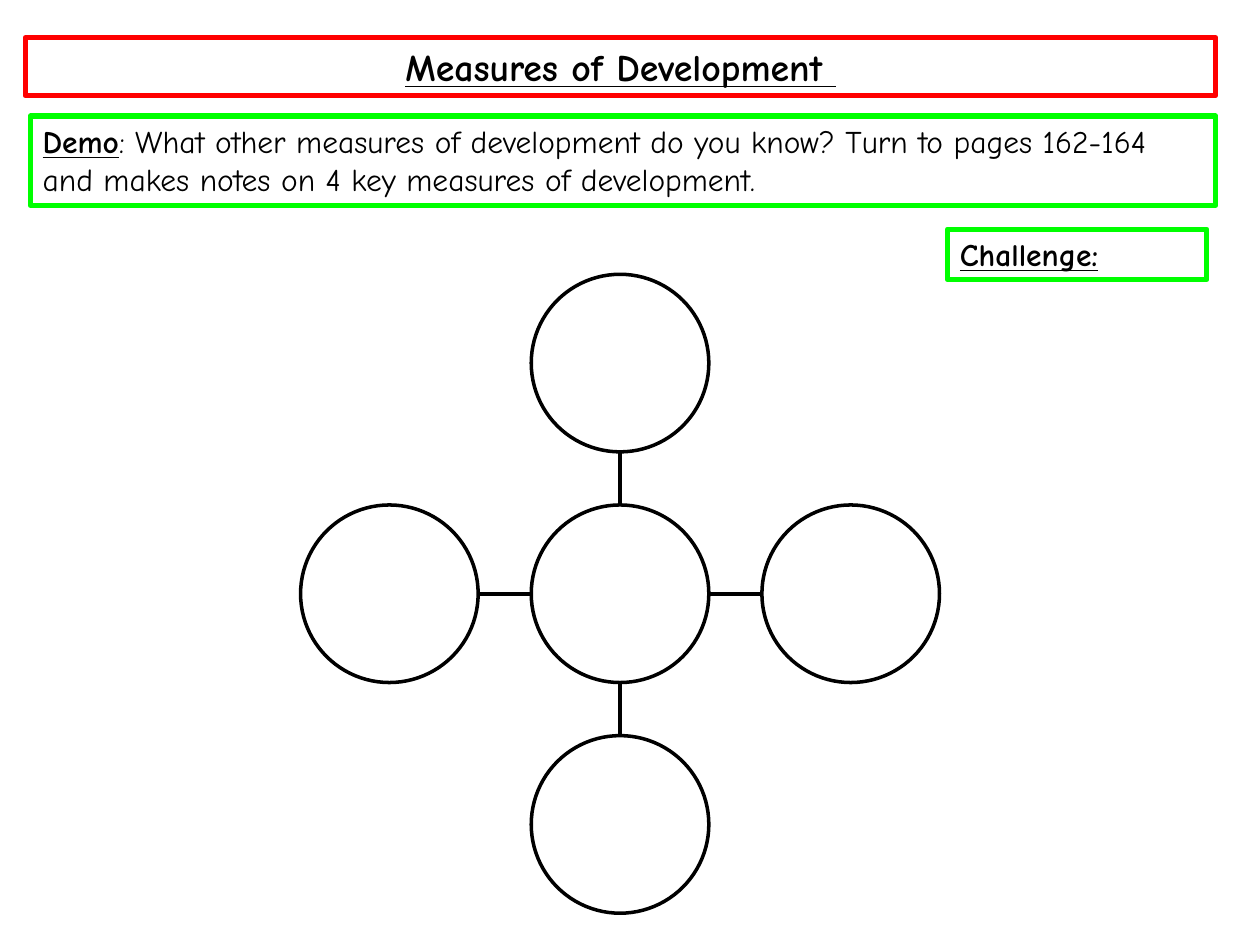
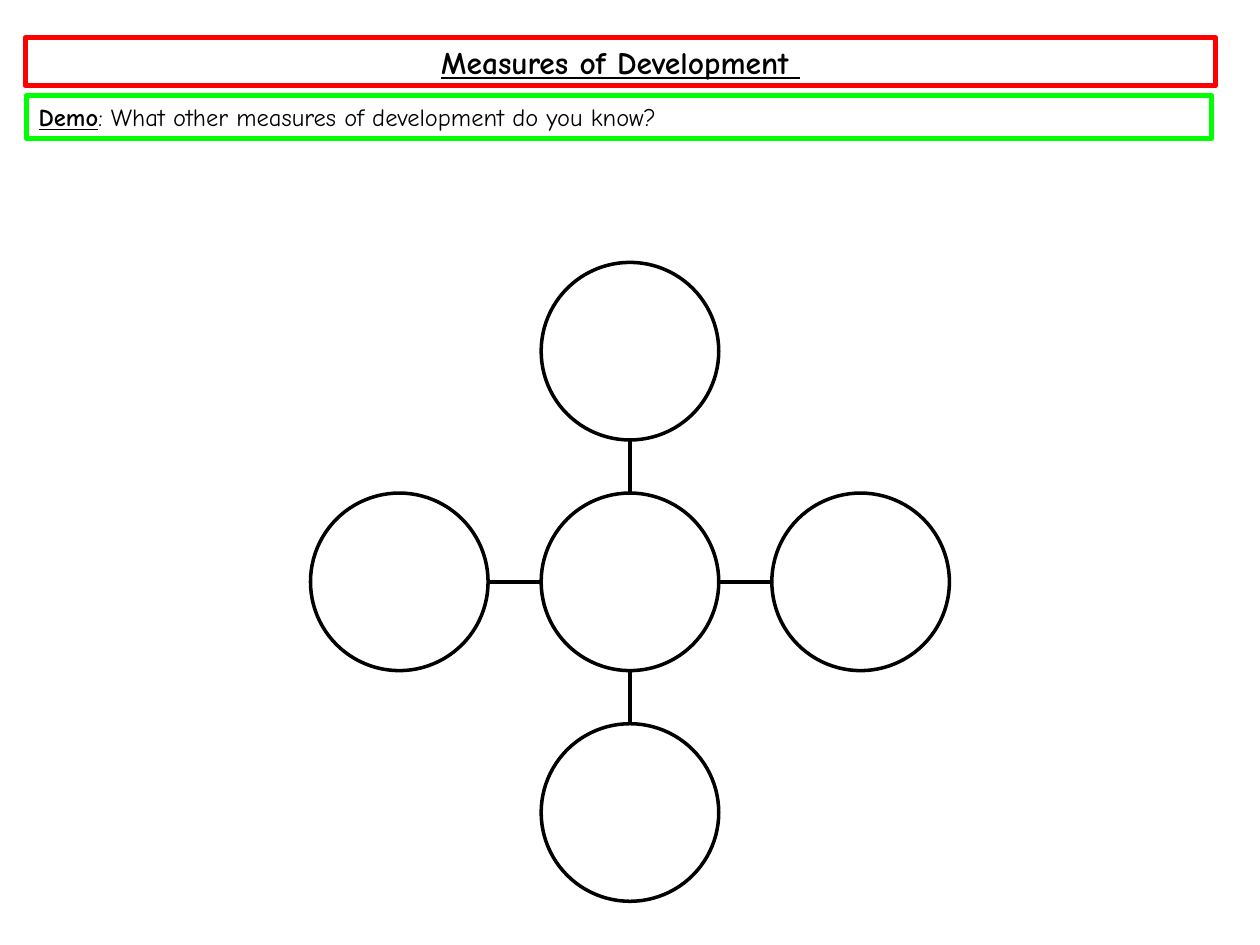
from pptx import Presentation
from pptx.dml.color import RGBColor
from pptx.enum.shapes import MSO_CONNECTOR as CONN, MSO_SHAPE as SHAPE
from pptx.enum.text import MSO_ANCHOR as ANCHOR, PP_ALIGN as ALIGN
from pptx.util import Cm, Pt
from lxml import etree

COLORS = {"title": "FF0000", "task": "00FF00", "ink": "000000", "paper": "FFFFFF"}
FONT = "Comic Neue"
HEADING = {"bold": True, "underline": True}
BODY = {"bold": False, "underline": False}
A_NS = "http://schemas.openxmlformats.org/drawingml/2006/main"

CIRCLE = 3.58  # diameter, cm
STEP = 4.65    # between neighbouring circle centres, cm
DIRECTIONS = [(0, -1), (1, 0), (0, 1), (-1, 0)]

TITLE = "Measures of Development "
QUESTION = ": What other measures of development do you know?"
NOTES = " Turn to pages 162-164 and makes notes on 4 key measures of development."

# Each box: colour, (left, top, width, height) in cm, text size, heading, body
SLIDES = [
    {"centre": (12.5, 11.97),
     "boxes": [("title", (0.51, 0.76, 24, 1.17), 21.6, TITLE, ""),
               ("task", (0.61, 2.34, 23.9, 1.8), 18, "Demo", QUESTION + NOTES),
               ("task", (19.1, 4.62, 5.23, 1.02), 18, "Challenge:", "")]},
    {"centre": (12.7, 11.73),
     "boxes": [("title", (0.51, 0.76, 24, 0.97), 18, TITLE, ""),
               ("task", (0.53, 1.93, 23.9, 0.86), 14, "Demo", QUESTION)]},
]


def set_line(shape, color, width):
    shape.line.color.rgb = RGBColor.from_string(COLORS[color])
    shape.line.width = Pt(width)


def add_circle(group, x, y):
    """Draw an empty note circle centred on x, y (cm)."""
    c = group.shapes.add_shape(SHAPE.OVAL, Cm(x - CIRCLE / 2), Cm(y - CIRCLE / 2),
                               Cm(CIRCLE), Cm(CIRCLE))
    c.shadow.inherit = False
    c.fill.solid()
    c.fill.fore_color.rgb = RGBColor.from_string(COLORS["paper"])
    set_line(c, "ink", 2)


prs = Presentation()
prs.slide_width, prs.slide_height = Cm(25.4), Cm(19.05)

for content in SLIDES:
    s = prs.slides.add_slide(prs.slide_layouts[6])

    for kind, place, size, heading, body in content["boxes"]:
        sp = s.shapes.add_textbox(*map(Cm, place))
        set_line(sp, kind, 3)
        tf = sp.text_frame
        tf.word_wrap = True
        p = tf.paragraphs[0]
        if kind == "title":
            tf.vertical_anchor = ANCHOR.MIDDLE
            p.alignment = ALIGN.CENTER
        for text, style in ((heading, HEADING), (body, BODY)):
            if not text:
                continue
            r = p.add_run()
            r.text = text
            r.font.color.rgb = RGBColor.from_string(COLORS["ink"])
            for name, value in {"name": FONT, "size": Pt(size), **style}.items():
                setattr(r.font, name, value)

    # Mind map: a central circle joined to one circle on each side
    cx, cy = content["centre"]
    mind_map = s.shapes.add_group_shape()
    add_circle(mind_map, cx, cy)
    near, far = CIRCLE / 2, STEP - CIRCLE / 2
    for dx, dy in DIRECTIONS:
        link = mind_map.shapes.add_connector(
            CONN.STRAIGHT, Cm(cx + dx * near), Cm(cy + dy * near),
            Cm(cx + dx * far), Cm(cy + dy * far))
        set_line(link, "ink", 2)
        etree.SubElement(link._element.spPr, f"{{{A_NS}}}effectLst")
        add_circle(mind_map, cx + dx * STEP, cy + dy * STEP)

prs.save("out.pptx")
